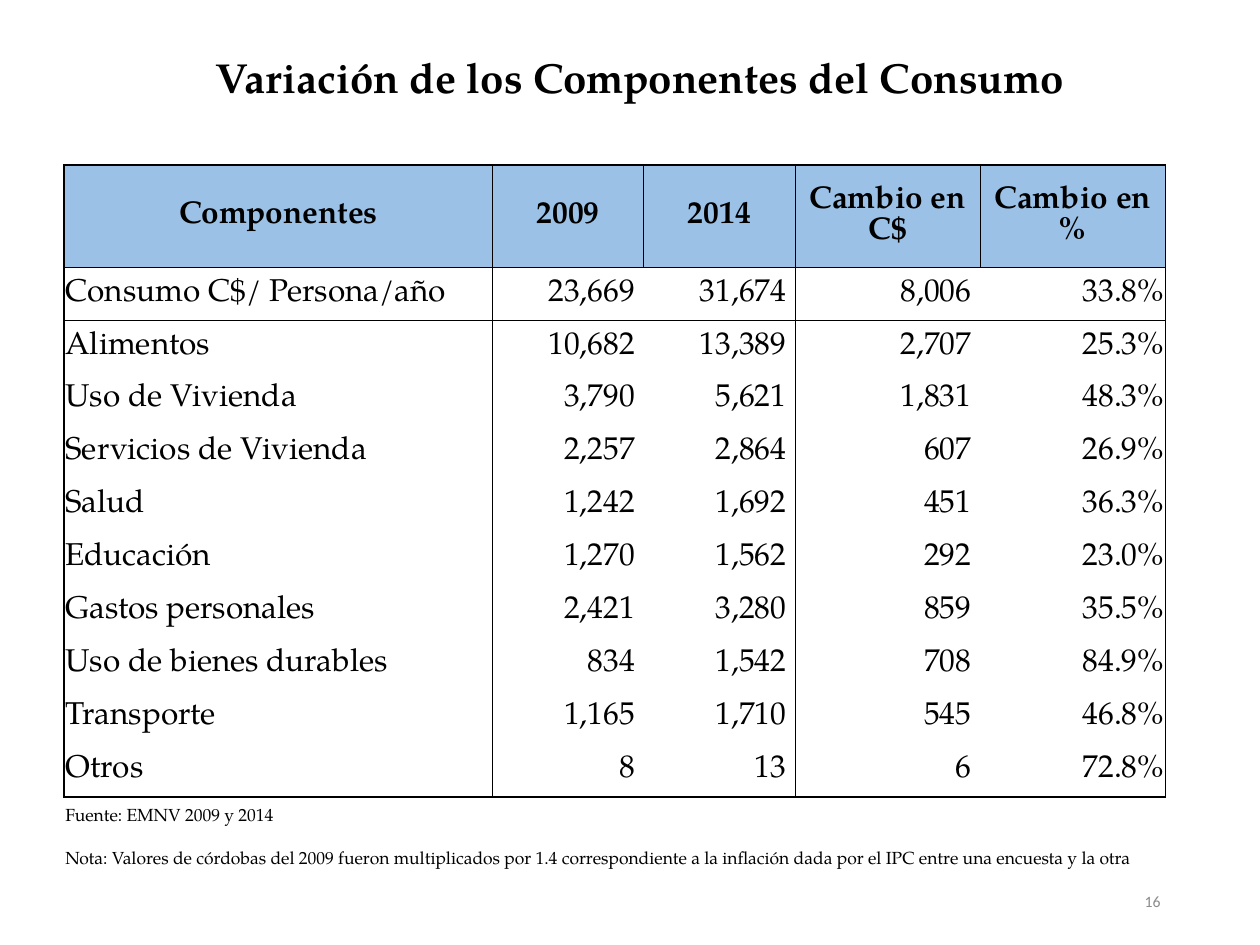
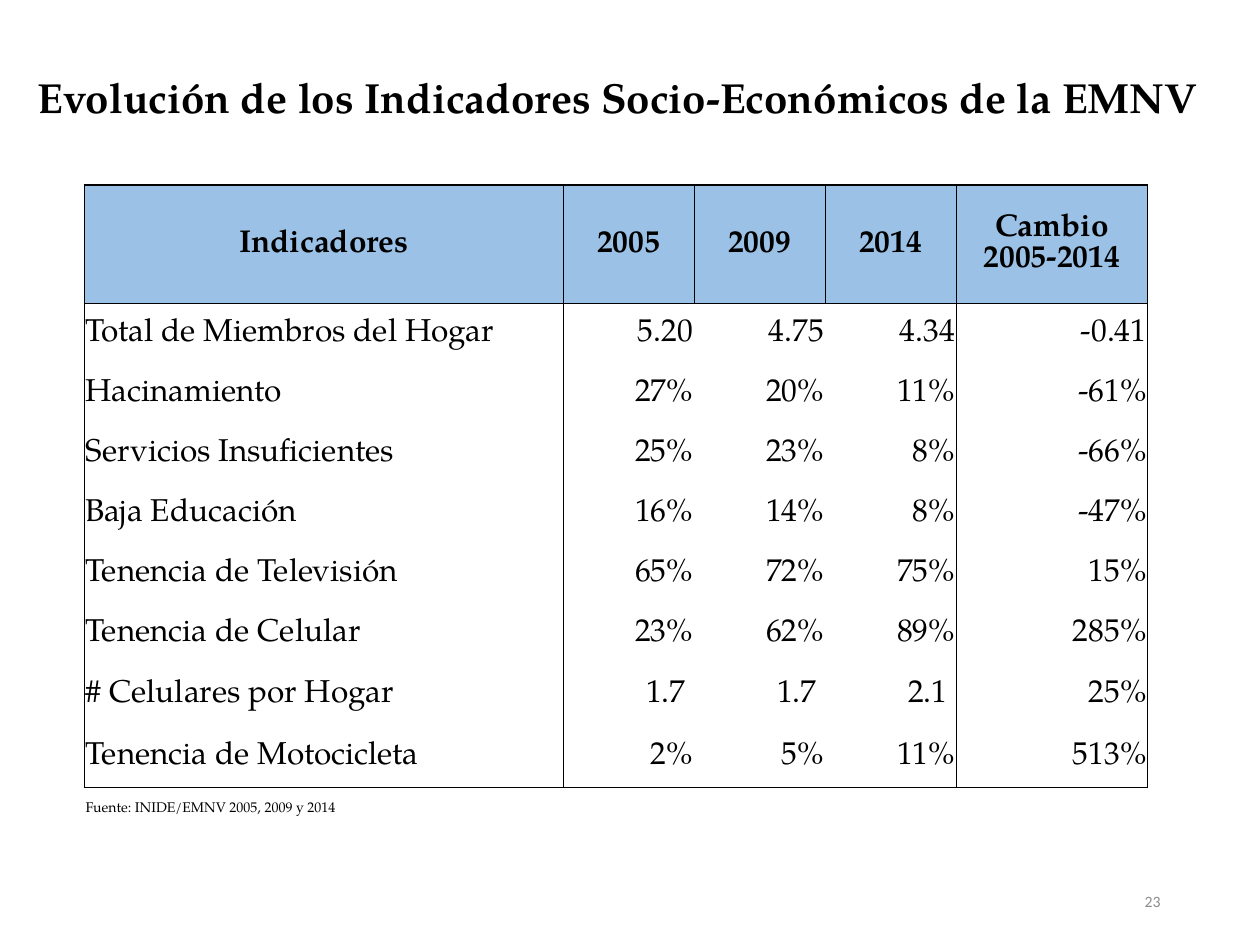
from lxml.etree import SubElement
from pptx import Presentation
from pptx.dml.color import RGBColor
from pptx.enum.text import MSO_ANCHOR as Anchor, PP_ALIGN as Align
from pptx.oxml.ns import qn
from pptx.util import Inches, Pt

# Shared style
COLORS = {"text": "000000", "header": "9BC2E6", "page": "8C8C8C"}
SERIF, SANS = "TeX Gyre Pagella", "Calibri"
OUTER, INNER = 1, 0.5  # rule widths in points
CELL_MARGIN, NUMBER_INDENT = 0.01, 0.07

# Content: "column_rules" and "row_rules" are grid line numbers
SLIDES = [
    {
        "title": "Variación de los Componentes del Consumo",
        "title_box": (1.61, 0.36, 7.07, 0.5),
        "page": "16",
        "table_at": (0.51, 1.31),
        "columns": [3.4, 1.2, 1.2, 1.47, 1.47],
        "heights": [0.81] + [0.42] * 9 + [0.43, 0.31, 0.37],
        "rows": [
            ("Componentes", "2009", "2014", "Cambio en C$", "Cambio en %"),
            ("Consumo C$/ Persona/año", "23,669", "31,674", "8,006", "33.8%"),
            ("Alimentos", "10,682", "13,389", "2,707", "25.3%"),
            ("Uso de Vivienda", "3,790", "5,621", "1,831", "48.3%"),
            ("Servicios de Vivienda", "2,257", "2,864", "607", "26.9%"),
            ("Salud", "1,242", "1,692", "451", "36.3%"),
            ("Educación", "1,270", "1,562", "292", "23.0%"),
            ("Gastos personales", "2,421", "3,280", "859", "35.5%"),
            ("Uso de bienes durables", "834", "1,542", "708", "84.9%"),
            ("Transporte", "1,165", "1,710", "545", "46.8%"),
            ("Otros", "8", "13", "6", "72.8%"),
        ],
        "notes": [
            "Fuente: EMNV 2009 y 2014",
            "Nota: Valores de córdobas del 2009 fueron multiplicados por 1.4 "
            "correspondiente a la inflación dada por el IPC entre una encuesta y la otra",
        ],
        "note_size": 10,
        "column_rules": {0: OUTER, 1: INNER, 3: INNER, 5: OUTER},
        "row_rules": {0: OUTER, 1: INNER, 2: INNER, 11: OUTER},
        "indented_rows": range(1, 11),
    },
    {
        "title": "Evolución de los Indicadores Socio-Económicos de la EMNV",
        "title_box": (0.2, 0.52, 9.66, 0.5),
        "page": "23",
        "table_at": (0.67, 1.47),
        "columns": [3.8, 1.04, 1.04, 1.04, 1.52],
        "heights": [0.94] + [2.86 / 6] * 6 + [0.5, 0.48, 0.34],
        "rows": [
            ("Indicadores", "2005", "2009", "2014", "Cambio 2005-2014"),
            ("Total de Miembros del Hogar", "5.20", "4.75", "4.34", "-0.41"),
            ("Hacinamiento", "27%", "20%", "11%", "-61%"),
            ("Servicios Insuficientes", "25%", "23%", "8%", "-66%"),
            ("Baja Educación", "16%", "14%", "8%", "-47%"),
            ("Tenencia de Televisión", "65%", "72%", "75%", "15%"),
            ("Tenencia de Celular", "23%", "62%", "89%", "285%"),
            ("# Celulares por Hogar", "1.7", "1.7", "2.1", "25%"),
            ("Tenencia de Motocicleta", "2%", "5%", "11%", "513%"),
        ],
        "notes": ["Fuente: INIDE/EMNV 2005, 2009 y 2014"],
        "note_size": 8,
        "column_rules": {0: OUTER, 1: INNER, 4: INNER, 5: OUTER},
        "row_rules": {0: OUTER, 1: INNER, 9: OUTER},
        "indented_rows": [7],
    },
]


# Text
def write(text_frame, text, size, align, font=SERIF, color="text", bold=False):
    paragraph = text_frame.paragraphs[0]
    paragraph.text = text
    paragraph.alignment = align
    for run in paragraph.runs:
        run.font.name = font
        run.font.size = Pt(size)
        run.font.bold = bold
        run.font.color.rgb = RGBColor.from_string(COLORS[color])


def add_text(slide, box, text, size, align=Align.LEFT, anchor=Anchor.TOP, **style):
    text_frame = slide.shapes.add_textbox(*map(Inches, box)).text_frame
    text_frame.word_wrap = True
    text_frame.vertical_anchor = anchor
    write(text_frame, text, size, align, **style)


# Table cells
def set_borders(cell, widths):
    properties = cell._tc.get_or_add_tcPr()
    for side, width in zip("LRTB", widths):
        line = SubElement(properties, qn(f"a:ln{side}"), w=str(Pt(width or 0)))
        if width:
            fill = SubElement(line, qn("a:solidFill"))
            SubElement(fill, qn("a:srgbClr"), val=COLORS["text"])
        else:
            SubElement(line, qn("a:noFill"))


def border_widths(content, row, column):
    body_end = len(content["rows"])
    row_rules, column_rules = content["row_rules"], content["column_rules"]
    top, bottom = row_rules.get(row), row_rules.get(row + 1)
    if row >= body_end:
        return None, None, top, bottom
    default = INNER if row == 0 else None
    left, right = (column_rules.get(edge, default) for edge in (column, column + 1))
    return left, right, top, bottom


def fill_cell(cell, content, row, column, text):
    is_header, is_note = row == 0, row >= len(content["rows"])
    cell.vertical_anchor = Anchor.MIDDLE
    cell.margin_left = cell.margin_top = cell.margin_right = Inches(CELL_MARGIN)
    cell.margin_bottom = 0
    if row in content["indented_rows"] and 1 <= column <= 3:
        cell.margin_right = Inches(NUMBER_INDENT)
    set_borders(cell, border_widths(content, row, column))
    if is_header:
        cell.fill.solid()
        cell.fill.fore_color.rgb = RGBColor.from_string(COLORS["header"])
    else:
        cell.fill.background()
    align = Align.CENTER if is_header else Align.RIGHT if column else Align.LEFT
    size = content["note_size"] if is_note else 18
    write(cell.text_frame, text, size, align, bold=is_header)
    if not text:  # keeps empty cells from stretching the row
        SubElement(cell.text_frame.paragraphs[0]._p, qn("a:endParaRPr"), sz=str(size * 100))


def add_data_table(slide, content):
    columns, heights = content["columns"], content["heights"]
    blanks = ("",) * (len(columns) - 1)
    rows = content["rows"] + [(note, *blanks) for note in content["notes"]]
    box = (*content["table_at"], sum(columns), sum(heights))
    table = slide.shapes.add_table(len(rows), len(columns), *map(Inches, box)).table
    table.first_row = table.horz_banding = False
    for column, width in zip(table.columns, columns):
        column.width = Inches(width)
    for table_row, height in zip(table.rows, heights):
        table_row.height = Inches(height)
    for row, texts in enumerate(rows):
        for column, text in enumerate(texts):
            fill_cell(table.cell(row, column), content, row, column, text)
    # A second note runs across the whole table
    if len(content["notes"]) > 1:
        last = len(rows) - 1
        table.cell(last, 0).merge(table.cell(last, len(columns) - 1))


def main():
    presentation = Presentation()
    presentation.slide_width, presentation.slide_height = Inches(10), Inches(7.5)
    for content in SLIDES:
        slide = presentation.slides.add_slide(presentation.slide_layouts[6])
        add_text(slide, content["title_box"], content["title"], 24, bold=True)
        add_data_table(slide, content)
        add_text(slide, (7.06, 6.95, 2.25, 0.4), content["page"], 9, Align.RIGHT,
                 Anchor.MIDDLE, font=SANS, color="page")
    presentation.save("out.pptx")


if __name__ == "__main__":
    main()
